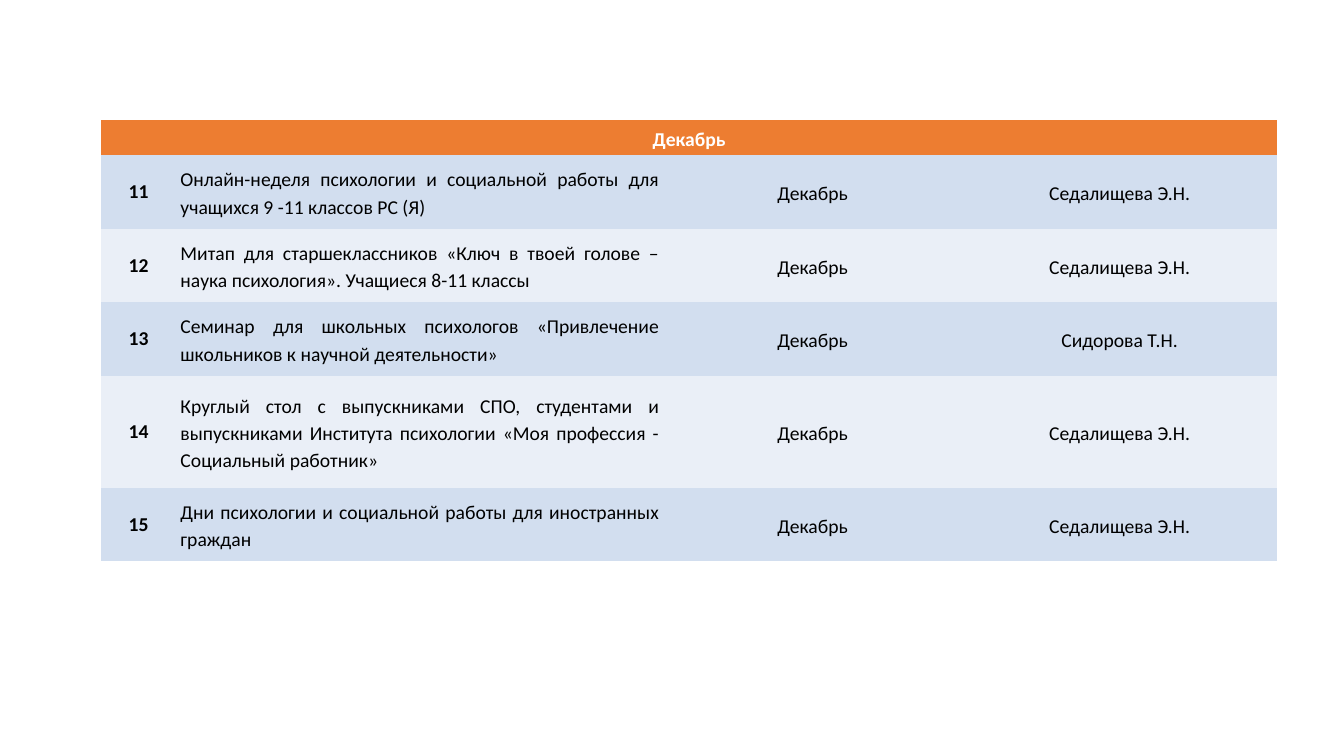
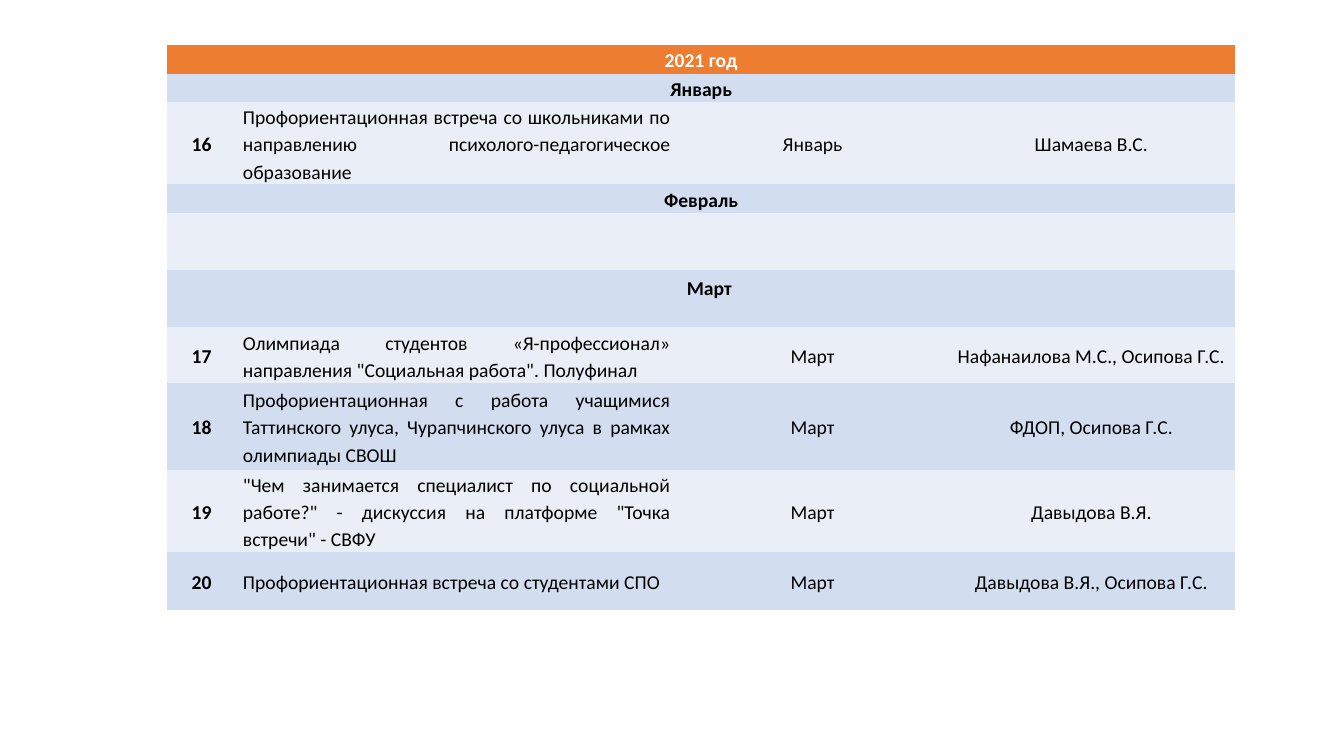
from pptx import Presentation
from pptx.dml.color import RGBColor
from pptx.enum.text import MSO_ANCHOR, PP_ALIGN
from pptx.oxml.ns import qn
from pptx.util import Emu, Pt

PIXEL = 9144  # 100 px to the inch
SLIDE_SIZE = (1333, 750)
BLANK_LAYOUT = 6
FONT_NAME = "Calibri"
FONT_SIZE = Pt(14)
LINE_SPACING = 1.15
PLAIN_TABLE_STYLE = "{2D5ABB26-0587-4C30-8999-92F81FD0307C}"

WHITE = RGBColor(0xFF, 0xFF, 0xFF)
BLACK = RGBColor(0x00, 0x00, 0x00)
ORANGE = RGBColor(0xED, 0x7D, 0x31)
BAND_FILLS = (RGBColor(0xD2, 0xDE, 0xEF), RGBColor(0xEA, 0xEF, 0xF7))

# A row with one text is a heading across the table; an empty row stays blank.
DECEMBER_ROWS = [
    (35, ["Декабрь"]),
    (73, ["11", "Онлайн-неделя психологии и социальной работы для учащихся 9 -11 классов РС (Я)",
          "Декабрь", "Седалищева Э.Н."]),
    (73, ["12", "Митап для старшеклассников «Ключ в твоей голове – наука психология». "
          "Учащиеся 8-11 классы", "Декабрь", "Седалищева Э.Н."]),
    (73, ["13", "Семинар для школьных психологов «Привлечение школьников к научной деятельности»",
          "Декабрь", "Сидорова Т.Н."]),
    (111, ["14", "Круглый стол с выпускниками СПО, студентами и выпускниками Института "
           "психологии «Моя профессия - Социальный работник»", "Декабрь", "Седалищева Э.Н."]),
    (73, ["15", "Дни психологии и социальной работы для иностранных граждан",
          "Декабрь", "Седалищева Э.Н."]),
]
MARCH_ROW = 5
WINTER_ROWS = [
    (28, ["2021 год"]),
    (28, ["Январь"]),
    (82, ["16", "Профориентационная встреча со школьниками по направлению "
          "психолого-педагогическое образование", "Январь", "Шамаева В.С."]),
    (28, ["Февраль"]),
    (57, []),
    (57, ["Март"]),
    (55, ["17", "Олимпиада студентов «Я-профессионал» направления \"Социальная работа\". "
          "Полуфинал", "Март", "Нафанаилова М.С., Осипова Г.С."]),
    (86, ["18", "Профориентационная с работа учащимися Таттинского улуса, Чурапчинского "
          "улуса в рамках олимпиады СВОШ", "Март", "ФДОП, Осипова Г.С."]),
    (82, ["19", "\"Чем занимается специалист по социальной работе?\" - дискуссия на "
          "платформе \"Точка встречи\" - СВФУ", "Март", "Давыдова В.Я."]),
    (57, ["20", "Профориентационная встреча со студентами СПО",
          "Март", "Давыдова В.Я., Осипова Г.С."]),
]


def px(length):
    return Emu(length * PIXEL)


def write_cell(cell, text, color=BLACK, bold=False, alignment=PP_ALIGN.CENTER,
               spacing=LINE_SPACING):
    cell.vertical_anchor = MSO_ANCHOR.MIDDLE
    paragraph = cell.text_frame.paragraphs[0]
    paragraph.text = text
    paragraph.alignment = alignment
    paragraph.line_spacing = spacing
    font = paragraph.font
    for target in (font, *(run.font for run in paragraph.runs)):
        target.name = FONT_NAME
        target.size = FONT_SIZE
        target.bold = bold
        target.color.rgb = color


def fill_row(table, row_index, texts, margin, number_spacing):
    cells = [table.cell(row_index, column) for column in range(len(table.columns))]
    for cell in cells:
        cell.margin_left = cell.margin_right = px(margin)
        cell.margin_top = cell.margin_bottom = 0
        cell.fill.solid()
        cell.fill.fore_color.rgb = BAND_FILLS[(row_index - 1) % 2] if row_index else ORANGE
    if len(texts) == 1:
        cells[0].merge(cells[-1])
        write_cell(cells[0], texts[0], BLACK if row_index else WHITE, bold=True)
        return
    for column, (cell, text) in enumerate(zip(cells, texts)):
        write_cell(cell, text, bold=column == 0,
                   alignment=PP_ALIGN.JUSTIFY if column == 1 else PP_ALIGN.CENTER,
                   spacing=number_spacing if column == 0 else LINE_SPACING)


def add_schedule(slide, left, top, column_widths, rows, margin, number_spacing=LINE_SPACING):
    height = sum(row_height for row_height, _ in rows)
    frame = slide.shapes.add_table(len(rows), len(column_widths), px(left), px(top),
                                   px(sum(column_widths)), px(height))
    table = frame.table
    table.first_row = table.horz_banding = False
    table._tbl.tblPr.find(qn("a:tableStyleId")).text = PLAIN_TABLE_STYLE
    for column, width in zip(table.columns, column_widths):
        column.width = px(width)
    for row_index, (row_height, texts) in enumerate(rows):
        table.rows[row_index].height = px(row_height)
        fill_row(table, row_index, texts, margin, number_spacing)
    return table


def shift_march_heading(table):
    """Raise the heading and move it a little left of the table's middle."""
    cell = table.cell(MARCH_ROW, 0)
    cell.vertical_anchor = MSO_ANCHOR.TOP
    cell.margin_top = px(3)
    cell.margin_left = px(30)
    cell.margin_right = px(14)


def main():
    presentation = Presentation()
    presentation.slide_width, presentation.slide_height = map(px, SLIDE_SIZE)
    layout = presentation.slide_layouts[BLANK_LAYOUT]

    december_slide = presentation.slides.add_slide(layout)
    add_schedule(december_slide, 100, 119, [75, 483, 296, 313], DECEMBER_ROWS,
                 margin=4, number_spacing=1.0)

    winter_slide = presentation.slides.add_slide(layout)
    winter_table = add_schedule(winter_slide, 166, 45, [68, 438, 268, 285], WINTER_ROWS, margin=7)
    shift_march_heading(winter_table)

    presentation.save("out.pptx")


if __name__ == "__main__":
    main()
